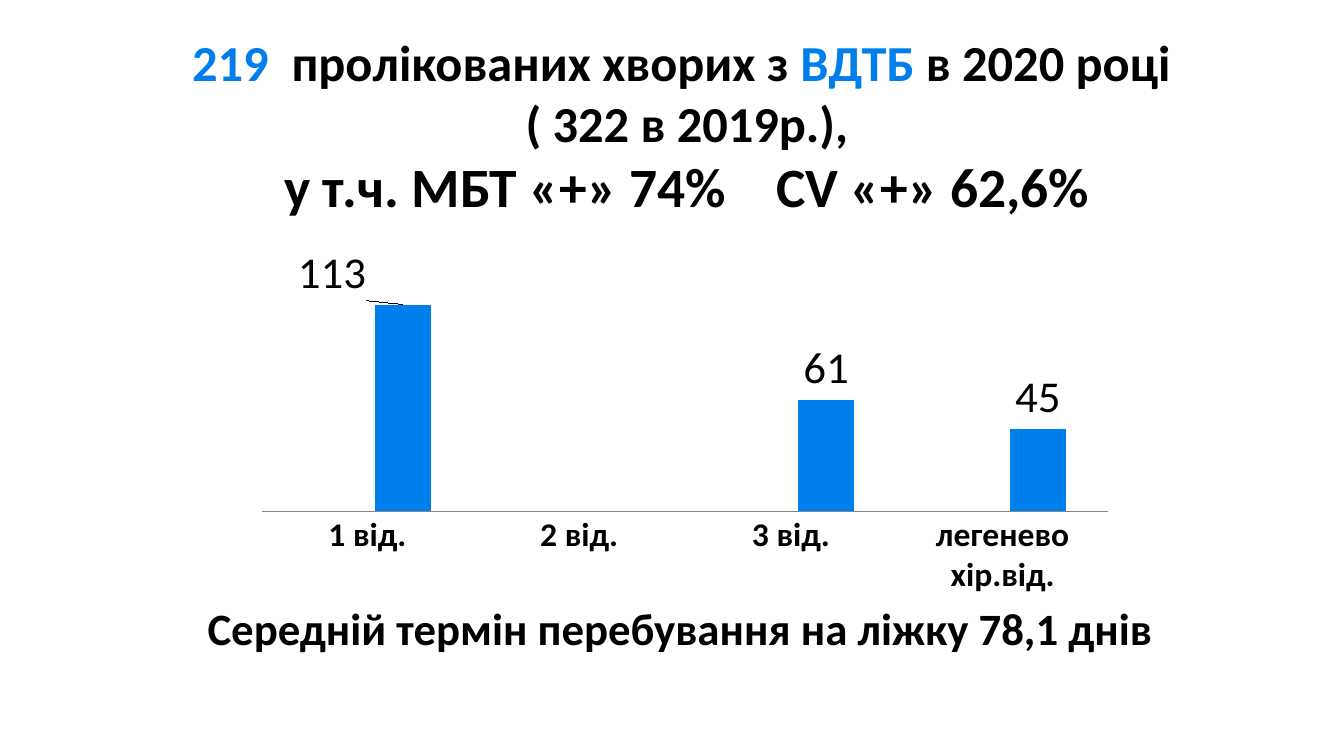
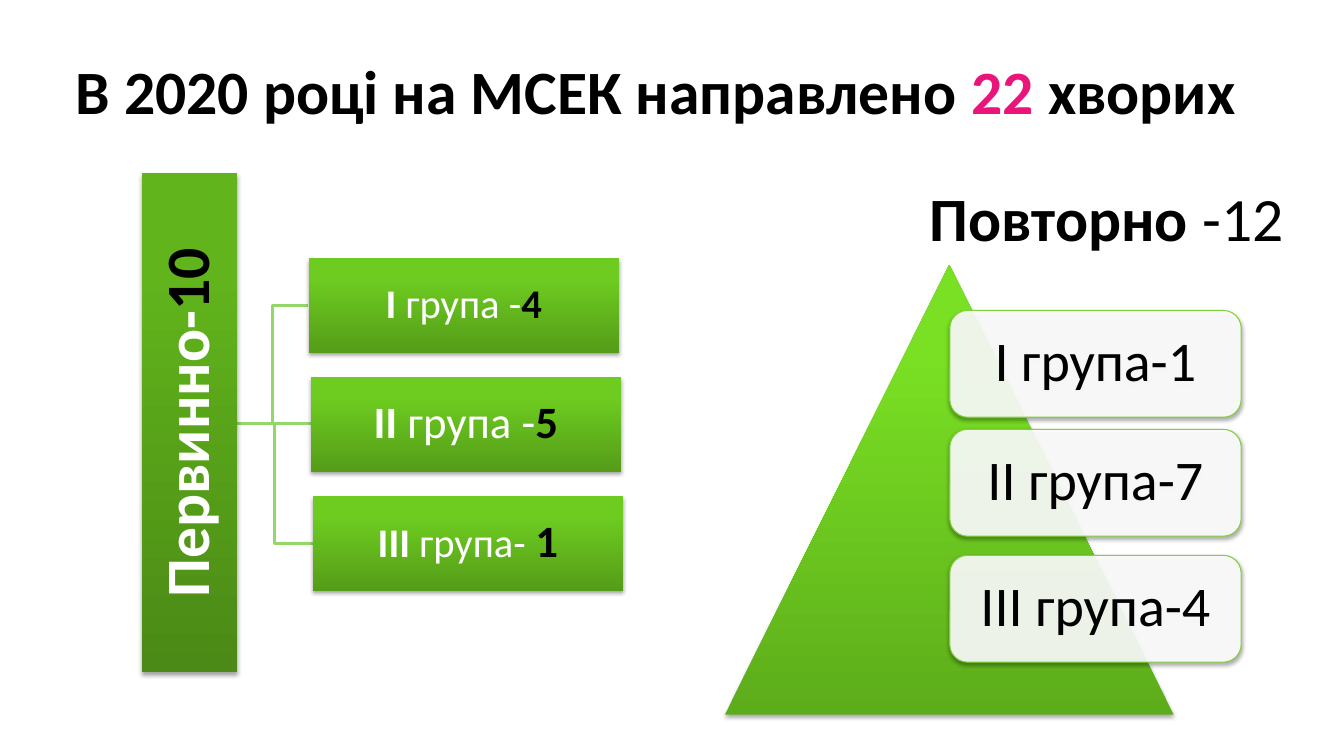
from lxml import etree
from pptx import Presentation
from pptx import util as u
from pptx.chart.data import CategoryChartData
from pptx.dml.color import RGBColor
from pptx.enum import chart as ch, shapes, text
from pptx.oxml.ns import qn

FONT = "Calibri"
BLACK, WHITE, BLUE, PINK = "000000", "FFFFFF", "007EEB", "EA157A"
LEAF, TWIG = "7FD13B", "93D669"
SPINE_GREEN = ("4B8A16", "61B41C")
BOX_GREEN = ("559D19", "6ECC20")
PYRAMID_GREEN = ("5DAD1B", "79E023")

TREATED_TITLE = [
    ("219 ", {"color": BLUE}),
    (" пролікованих хворих з ", {}),
    ("ВДТБ", {"color": BLUE}),
    (" в 2020 році \n( 322 в 2019р.),\n", {}),
    ("у т.ч. МБТ «+» 74%    CV «+» 62,6%", {"size": 39.6}),
]
STAY = [("Середній термін перебування на ліжку 78,1 днів", {})]
WARDS = ["1 від.", "2 від.", "3 від.", "легенево хір.від."]
PATIENTS = [
    ("Series 1", [None] * 4, LEAF),
    ("Series 2", [113, None, 61, 45], BLUE),
]

REFERRED_TITLE = [
    ("В 2020 році на МСЕК направлено ", {}),
    ("22 ", {"color": PINK}),
    ("хворих", {}),
]
PRIMARY = [("Первинно-", {"color": WHITE}), ("10", {})]
PRIMARY_GROUPS = [
    ("I ", "група -", "4", 29, 29),
    ("II ", "група -", "5", 32, 32),
    ("III ", "група- ", "1", 29, 32),
]
REPEAT = [("Повторно", {}), (" -12", {"bold": False})]
REPEAT_GROUPS = [("І група-1", 3.08), ("ІІ група-7", 4.26), ("ІІІ група-4", 5.51)]


def rgb(value):
    return RGBColor.from_string(value)


def inches(box):
    return [u.Inches(v) for v in box]


def style(font, size, color=BLACK, bold=False):
    font.name, font.size, font.bold = FONT, u.Pt(size), bold
    font.color.rgb = rgb(color)


def write(holder, runs, size=36, color=BLACK, bold=True, align="CENTER",
          wrap=True, inset=None, spacing=None):
    frame = holder.text_frame
    frame.word_wrap = wrap
    frame.vertical_anchor = text.MSO_ANCHOR.MIDDLE
    if inset is not None:
        frame.margin_left = frame.margin_right = u.Inches(inset)
        frame.margin_top = frame.margin_bottom = u.Inches(inset)
    para = frame.paragraphs[0]
    para.alignment = getattr(text.PP_ALIGN, align)
    para.line_spacing = spacing
    for words, changes in runs:
        for i, line in enumerate(words.split("\n")):
            if i:
                para.add_line_break()
            if line:
                run = para.add_run()
                run.text = line
                style(run.font, **{"size": size, "color": color, "bold": bold, **changes})


def add_text(slide, box, runs, **form):
    write(slide.shapes.add_textbox(*inches(box)), runs, **form)


def add_effects(part, shadow=False):
    effects = etree.SubElement(part._element.spPr, qn("a:effectLst"))
    if shadow:
        outer = etree.SubElement(effects, qn("a:outerShdw"), blurRad=str(u.Pt(3.1)),
                                 dist=str(u.Pt(1.8)), dir="5400000", rotWithShape="0")
        black = etree.SubElement(outer, qn("a:srgbClr"), val=BLACK)
        etree.SubElement(black, qn("a:alpha"), val="35000")


def add_block(slide, kind, box, gradient=None, line=None):
    block = slide.shapes.add_shape(getattr(shapes.MSO_SHAPE, kind), *inches(box))
    if gradient:
        block.fill.gradient()
        block.fill.gradient_angle = 90
        for stop, place, color in zip(block.fill.gradient_stops, (0, 0.8), gradient):
            stop.position = place
            stop.color.rgb = rgb(color)
    else:
        block.fill.solid()
        block.fill.fore_color.rgb = rgb(WHITE)
        tint = block._element.spPr.find(qn("a:solidFill"))[0]
        etree.SubElement(tint, qn("a:alpha"), val="90000")
    if line:
        block.line.color.rgb = rgb(line)
        block.line.width = u.Pt(0.75)
    else:
        block.line.fill.background()
    add_effects(block, shadow=True)
    return block


def add_branch(slide, start, end):
    kind = "STRAIGHT" if start[1] == end[1] else "ELBOW"
    branch = slide.shapes.add_connector(getattr(shapes.MSO_CONNECTOR, kind),
                                        *inches(start + end))
    branch.line.color.rgb = rgb(TWIG)
    branch.line.width = u.Pt(2)
    add_effects(branch)


def add_layout(parent, index, **values):
    old = parent.find(qn("c:layout"))
    if old is not None:
        parent.remove(old)
    layout = etree.Element(qn("c:layout"))
    manual = etree.SubElement(layout, qn("c:manualLayout"))
    for name, value in values.items():
        etree.SubElement(manual, qn("c:" + name), val=str(value))
    parent.insert(index, layout)


def add_patients_chart(slide, box):
    data = CategoryChartData()
    data.categories = WARDS
    for name, values, _ in PATIENTS:
        data.add_series(name, values)
    chart = slide.shapes.add_chart(ch.XL_CHART_TYPE.COLUMN_CLUSTERED,
                                   *inches(box), data).chart
    chart.has_legend = chart.has_title = False
    style(chart.font, 18)
    wards, scale = chart.category_axis, chart.value_axis
    style(wards.tick_labels.font, 24, bold=True)
    wards.major_tick_mark = ch.XL_TICK_MARK.NONE
    wards.format.line.color.rgb = rgb("868686")
    scale.visible = scale.has_major_gridlines = False
    scale.minimum_scale, scale.maximum_scale = 0, 120
    plot = chart.plots[0]
    plot.gap_width, plot.overlap, plot.vary_by_categories = 150, -25, False
    for series, (_, _, color) in zip(plot.series, PATIENTS):
        series.format.fill.solid()
        series.format.fill.fore_color.rgb = rgb(color)
        labels = series.data_labels
        labels.show_value = True
        labels.position = ch.XL_LABEL_POSITION.OUTSIDE_END
        style(labels.font, 32)
    first = series.points[0].data_label
    style(first.font, 32)
    first.position = ch.XL_LABEL_POSITION.OUTSIDE_END
    add_layout(series._element.find(".//" + qn("c:dLbl")), 1, x=-0.08, y=0)
    add_layout(chart._chartSpace.find(".//" + qn("c:plotArea")), 0, layoutTarget="inner",
               xMode="edge", yMode="edge", x=0.02, y=0.12, w=0.96, h=0.64)


def build_treated(slide):
    add_text(slide, (0.61, 0.74, 12.41, 1), TREATED_TITLE)
    add_patients_chart(slide, (2.42, 2.44, 8.75, 3.47))
    add_text(slide, (1.96, 5.91, 9.68, 0.64), STAY, size=32, align="LEFT", wrap=False)


def build_referred(slide):
    add_text(slide, (0.36, 0.29, 12.29, 1.2), REFERRED_TITLE, size=44)
    height, fork = 0.94, (2.35, 4.2)
    boxes = [(3.06 + 0.02 * i, 2.56 + 1.18 * i, 3.08, height) for i in range(3)]
    for i, (left, top, _, _) in enumerate(boxes):
        add_branch(slide, fork, (left, fork[1] if i == 1 else top + height / 2))
    spine = add_block(slide, "RECTANGLE", (1.41, 1.72, height, 4.95), SPINE_GREEN)
    write(spine, PRIMARY, size=44, inset=0.03, spacing=0.9)
    spine.text_frame._txBody.bodyPr.set("vert", "vert270")
    for box, (number, label, count, size, count_size) in zip(boxes, PRIMARY_GROUPS):
        runs = [(number, {}), (label, {"bold": False}),
                (count, {"color": BLACK, "size": count_size})]
        write(add_block(slide, "RECTANGLE", box, BOX_GREEN), runs,
              size=size, color=WHITE, inset=0.02, spacing=0.9)
    add_block(slide, "ISOSCELES_TRIANGLE", (7.19, 2.63, 4.45, 4.46), PYRAMID_GREEN)
    for label, top in REPEAT_GROUPS:
        card = add_block(slide, "ROUNDED_RECTANGLE", (9.42, top, 2.89, 1.06), line=LEAF)
        write(card, [(label, {})], size=40, bold=False, inset=0.17, spacing=0.9)
    add_text(slide, (9.12, 1.73, 3.75, 0.84), REPEAT, size=44, align="LEFT", wrap=False)


def main():
    deck = Presentation()
    deck.slide_width, deck.slide_height = inches((13.33, 7.5))
    for build in (build_treated, build_referred):
        build(deck.slides.add_slide(deck.slide_layouts[6]))
    deck.save("out.pptx")


if __name__ == "__main__":
    main()
